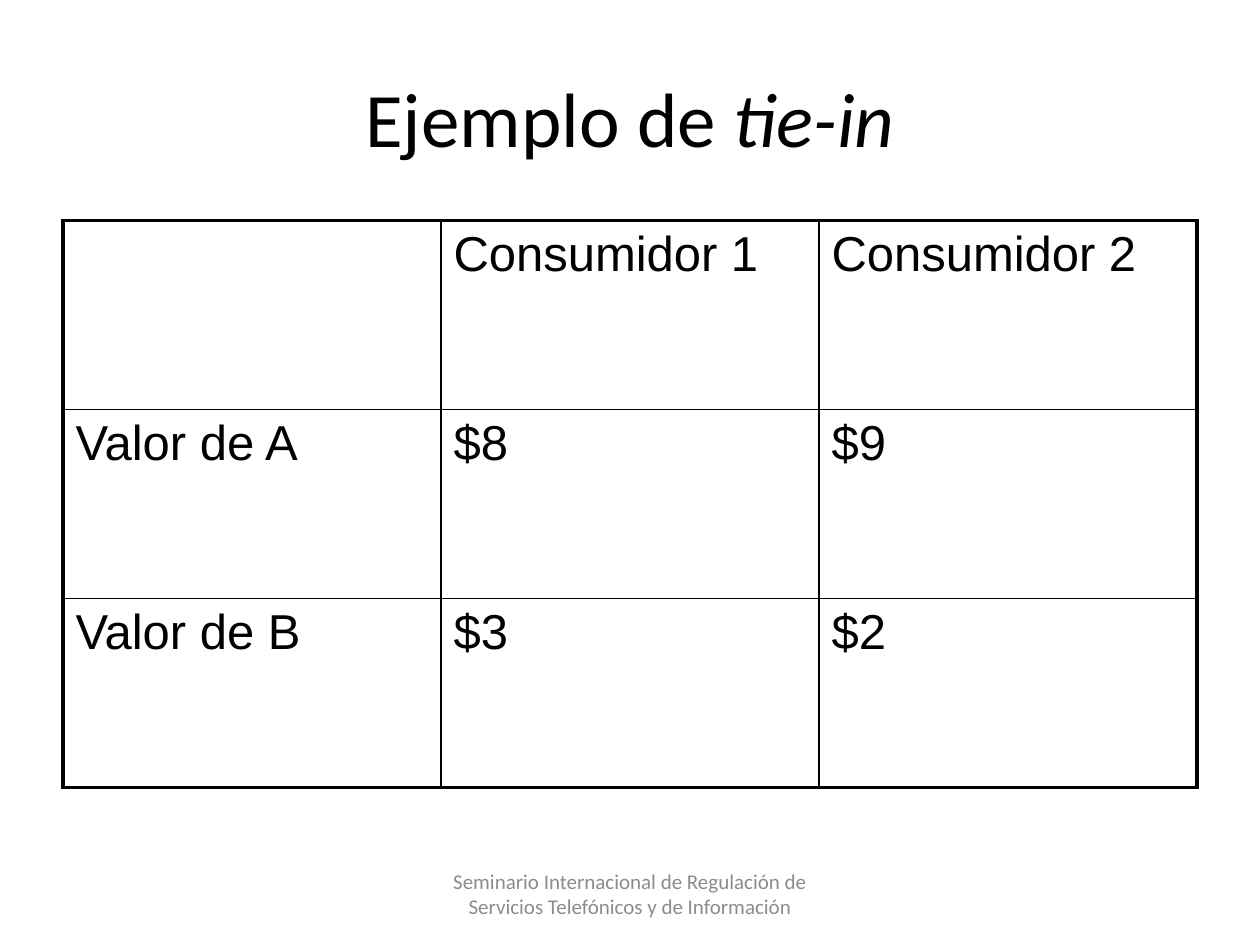
from lxml import etree
from pptx import Presentation, util as u
from pptx.dml.color import RGBColor
from pptx.enum import text as t
from pptx.oxml.ns import qn

INK = {"text": "000000", "line": "000000", "foot": "8C8C8C", "cell": "FFFFFF"}
ROWS = [
    ["", "Consumidor 1", "Consumidor 2"],
    ["Valor de A", "$8", "$9"],
    ["Valor de B", "$3", "$2"],
]
THICK, THIN = 2.25, 1


class Deck:
    """Holds the style and the current slide."""

    def __init__(self, wide, high):
        self.prs = Presentation()
        self.prs.slide_width, self.prs.slide_height = u.Cm(wide), u.Cm(high)
        self.slide = self.prs.slides.add_slide(self.prs.slide_layouts[5])

    def style(self, para, size, font, ink="text"):
        for run in para.runs:
            run.font.size = u.Pt(size)
            run.font.name = font
            run.font.color.rgb = RGBColor.from_string(INK[ink])

    def title(self, plain, slanted, box):
        head = self.slide.shapes.title
        head.left, head.top, head.width, head.height = map(u.Cm, box)
        frame = head.text_frame
        frame.vertical_anchor = t.MSO_ANCHOR.MIDDLE
        para = frame.paragraphs[0]
        para.text = plain
        para.alignment = t.PP_ALIGN.CENTER
        run = para.add_run()
        run.text = slanted
        run.font.italic = True
        self.style(para, 44, "Calibri")

    def edge(self, cell, sides):
        """Draw the cell's borders; sides maps L, R, T, B to points."""
        props = cell._tc.get_or_add_tcPr()
        for spot, (side, width) in enumerate(sides.items()):
            line = etree.Element(qn(f"a:ln{side}"), w=str(u.Pt(width)))
            fill = etree.SubElement(line, qn("a:solidFill"))
            etree.SubElement(fill, qn("a:srgbClr"), val=INK["line"])
            props.insert(spot, line)

    def table(self, rows, box):
        high, wide = len(rows), len(rows[0])
        grid = self.slide.shapes.add_table(high, wide, *map(u.Cm, box)).table
        grid.first_row = grid.horz_banding = False
        for r, row in enumerate(rows):
            for c, words in enumerate(row):
                cell = grid.cell(r, c)
                cell.fill.solid()
                cell.fill.fore_color.rgb = RGBColor.from_string(INK["cell"])
                cell.text_frame.text = words
                self.style(cell.text_frame.paragraphs[0], 28, "Arial")
                outer = {"L": c == 0, "R": c == wide - 1,
                         "T": r == 0, "B": r == high - 1}
                self.edge(cell, {side: THICK if out else THIN
                                 for side, out in outer.items()})

    def footer(self, words, box):
        frame = self.slide.shapes.add_textbox(*map(u.Cm, box)).text_frame
        frame.word_wrap = True
        frame.vertical_anchor = t.MSO_ANCHOR.MIDDLE
        para = frame.paragraphs[0]
        para.text = words
        para.alignment = t.PP_ALIGN.CENTER
        self.style(para, 12, "Calibri", "foot")


def main():
    deck = Deck(25.4, 19.05)
    deck.title("Ejemplo de ", "tie-in", (1.27, 0.76, 22.86, 3.18))
    deck.table(ROWS, (1.27, 4.45, 22.86, 11.43))
    deck.footer("Seminario Internacional de Regulación de "
                "Servicios Telefónicos y de Información",
                (8.68, 17.35, 8.04, 1.32))
    deck.prs.save("out.pptx")


if __name__ == "__main__":
    main()
